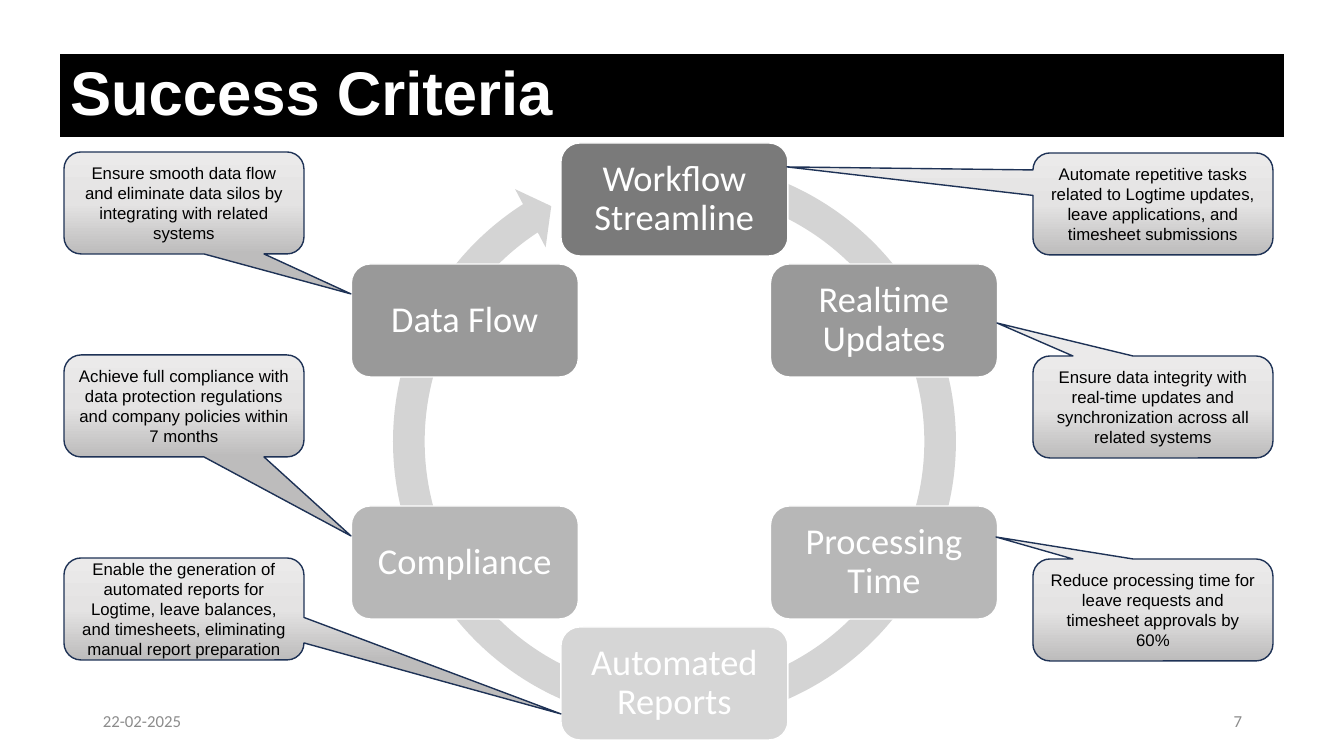
import copy
import math

import pptx
import pptx.dml.color
import pptx.enum.shapes
import pptx.enum.text
import pptx.oxml.ns
import pptx.util

SCALE = 914400 / 100.8
SHAPE = pptx.enum.shapes.MSO_SHAPE
ALIGN = pptx.enum.text.PP_ALIGN
MIDDLE = pptx.enum.text.MSO_ANCHOR.MIDDLE

NODES = [
    ("Workflow Streamline", "7A7A7A"),
    ("Realtime Updates", "999999"),
    ("Processing Time", "B7B7B7"),
    ("Automated Reports", "D6D6D6"),
    ("Compliance", "B7B7B7"),
    ("Data Flow", "999999"),
]
RIGHT = [
    ("Automate repetitive tasks related to Logtime updates, leave applications, and timesheet submissions", (787, 167)),
    ("Ensure data integrity with real-time updates and synchronization across all related systems", (997, 323)),
    ("Reduce processing time for leave requests and timesheet approvals by 60%", (996, 537)),
]
LEFT = [
    ("Ensure smooth data flow and eliminate data silos by integrating with related systems", (351, 294)),
    ("Achieve full compliance with data protection regulations and company policies within 7 months", (351, 536)),
    ("Enable the generation of automated reports for Logtime, leave balances, and timesheets, eliminating manual report preparation", (561, 714)),
]
SHADES = [(0, "EBEAEA"), (0.5, "E4E3E3"), (1, "BDBCBC")]


def px(n):
    return pptx.util.Emu(round(n * SCALE))


def color(code):
    return pptx.dml.color.RGBColor.from_string(code)


def paint(shape, fill):
    shape.fill.solid()
    shape.fill.fore_color.rgb = color(fill)


def edge(shape, code):
    shape.line.color.rgb = color(code)
    shape.line.width = pptx.util.Pt(1)


def write(shape, text, size, font, code, align, bold=False, space=None):
    frame = shape.text_frame
    frame.text = text
    frame.word_wrap = True
    frame.vertical_anchor = MIDDLE
    para = frame.paragraphs[0]
    para.alignment = align
    para.line_spacing = space
    face = para.runs[0].font
    face.size = pptx.util.Pt(size)
    face.name = font
    face.bold = bold
    face.color.rgb = color(code)


def add(slide, kind, x, y, w, h):
    shape = slide.shapes.add_shape(kind, px(x), px(y), px(w), px(h))
    shape.shadow.inherit = False
    return shape


def header(slide, x, y, w, h):
    title = slide.shapes.title
    title.left, title.top, title.width, title.height = map(px, (x, y, w, h))
    paint(title, "000000")
    write(title, "Success Criteria", 44, "Arial", "FFFFFF", ALIGN.LEFT, True, 0.9)
    title.text_frame.auto_size = pptx.enum.text.MSO_AUTO_SIZE.NONE


def footer(slide, x, y, w, h):
    wide = 302
    for left, text, align in [(x, "22-02-2025", ALIGN.LEFT), (x + w - wide, "7", ALIGN.RIGHT)]:
        box = slide.shapes.add_textbox(px(left), px(y), px(wide), px(h))
        write(box, text, 12, "Calibri", "8C8C8C", align)


def cycle(slide, x, y, size):
    arrow = add(slide, SHAPE.CIRCULAR_ARROW, x, y, size, size)
    for i, value in enumerate([0.053, 3.126, 142.291, 171.264, 0.055]):
        arrow.adjustments[i] = value
    paint(arrow, "D4D4D4")
    arrow.line.fill.background()
    wide, high, reach = 227, 113, 242
    for i, (text, fill) in enumerate(NODES):
        turn = math.tau * i / len(NODES)
        left = x + size / 2 + reach * math.sin(turn) - wide / 2
        top = y + size / 2 - reach * math.cos(turn) - high / 2
        node = add(slide, SHAPE.ROUNDED_RECTANGLE, left, top, wide, high)
        paint(node, fill)
        edge(node, "FFFFFF")
        write(node, text, 26, "Calibri", "FFFFFF", ALIGN.CENTER, space=0.9)
        frame = node.text_frame
        frame.margin_left = frame.margin_right = px(11)
        frame.margin_top = frame.margin_bottom = px(11)


def shade(shape):
    shape.fill.gradient()
    shape.fill.gradient_angle = 270
    first = next(shape.element.iter(pptx.oxml.ns.qn("a:gs")))
    first.addnext(copy.deepcopy(first))
    for stop, (place, code) in zip(shape.fill.gradient_stops, SHADES):
        stop.position = place
        stop.color.rgb = color(code)


def notes(slide, x, y, items):
    wide, high, pitch = 240, 102, 203
    for i, (text, (tip_x, tip_y)) in enumerate(items):
        top = y + i * pitch
        note = add(slide, SHAPE.ROUNDED_RECTANGULAR_CALLOUT, x, top, wide, high)
        note.adjustments[0] = (tip_x - x) / wide - 0.5
        note.adjustments[1] = (tip_y - top) / high - 0.5
        shade(note)
        edge(note, "1E3256")
        write(note, text, 12, "Arial", "000000", ALIGN.CENTER)


def main():
    deck = pptx.Presentation()
    deck.slide_width, deck.slide_height = px(1344), px(756)
    slide = deck.slides.add_slide(deck.slide_layouts[5])
    header(slide, 60, 54, 1224, 83)
    footer(slide, 93, 701, 1159, 40)
    cycle(slide, 376, 143, 597)
    notes(slide, 1033, 153, RIGHT)
    notes(slide, 64, 152, LEFT)
    deck.save("out.pptx")


if __name__ == "__main__":
    main()
